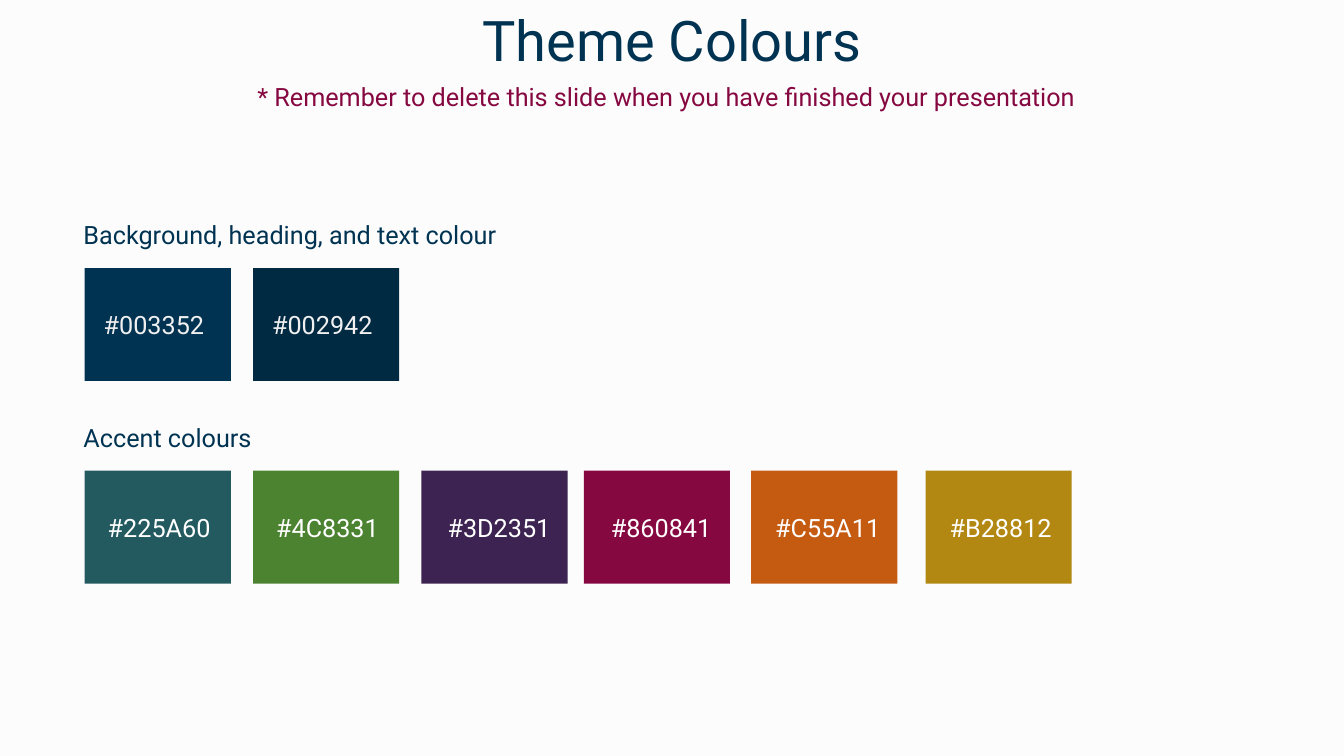
from pptx import Presentation
from pptx.dml.color import RGBColor
from pptx.enum import shapes, text
from pptx.util import Inches, Pt

FONT = "Roboto"
NAVY = "003352"
CLARET = "860841"
WHITE = "FFFFFF"
PALE = "F0F0F0"
SWATCH_WIDTH, SWATCH_HEIGHT = 1.45, 1.12
LABEL_DROP = 0.36

# Swatch left, label offset, colour
BASE_SWATCHES = [(0.84, 0.09, NAVY), (2.51, 0.09, "002942")]
ACCENT_SWATCHES = [
    (0.84, 0.13, "225A60"),
    (2.51, 0.13, "4C8331"),
    (4.18, 0.16, "3D2351"),
    (5.79, 0.17, CLARET),
    (7.45, 0.14, "C55A11"),
    (9.18, 0.14, "B28812"),
]


def colour(hex_string):
    return RGBColor.from_string(hex_string)


def add_run(paragraph, wording, size, hex_string):
    run = paragraph.add_run()
    run.text = wording
    run.font.name = FONT
    run.font.size = Pt(size)
    run.font.color.rgb = colour(hex_string)


def add_text_box(parent, left, top, width, height):
    """Add a wrapping text box to a slide or group and return it."""
    box = parent.shapes.add_textbox(
        Inches(left), Inches(top), Inches(width), Inches(height))
    box.text_frame.word_wrap = True
    return box


def add_title(slide):
    frame = add_text_box(slide, 0, 0, 13.33, 1.45).text_frame
    frame.vertical_anchor = text.MSO_ANCHOR.MIDDLE
    paragraph = frame.paragraphs[0]
    paragraph.alignment = text.PP_ALIGN.CENTER
    paragraph.line_spacing = Pt(30)
    add_run(paragraph, "Theme Colours", 40, NAVY)
    paragraph.add_line_break()
    add_run(paragraph, "* Remember to delete this slide when you have finished "
            "your presentation", 18, CLARET)
    add_run(paragraph, " ", 32, CLARET)


def add_heading(slide, top, wording):
    box = add_text_box(slide, 0.73, top, 4.57, 0.4)
    add_run(box.text_frame.paragraphs[0], wording, 18, NAVY)


def add_swatch(slide, left, top, label_offset, label_width, fill, text_colour):
    """Group a filled rectangle with a label showing its hex code."""
    group = slide.shapes.add_group_shape()
    block = group.shapes.add_shape(
        shapes.MSO_SHAPE.RECTANGLE, Inches(left), Inches(top),
        Inches(SWATCH_WIDTH), Inches(SWATCH_HEIGHT))
    block.shadow.inherit = False
    block.fill.solid()
    block.fill.fore_color.rgb = colour(fill)
    block.line.fill.background()
    label = add_text_box(
        group, left + label_offset, top + LABEL_DROP, label_width, 0.4)
    add_run(label.text_frame.paragraphs[0], f"#{fill}", 18, text_colour)


def add_palette(slide, top, heading, swatches, label_width, text_colour):
    add_heading(slide, top, heading)
    for left, label_offset, fill in swatches:
        add_swatch(slide, left, top + 0.53, label_offset, label_width,
                   fill, text_colour)


def main():
    presentation = Presentation()
    presentation.slide_width = Inches(13.33)
    presentation.slide_height = Inches(7.5)
    slide = presentation.slides.add_slide(presentation.slide_layouts[6])
    slide.background.fill.solid()
    slide.background.fill.fore_color.rgb = colour("FCFCFC")

    add_title(slide)
    add_palette(slide, 2.13, "Background, heading, and text colour",
                BASE_SWATCHES, 1.57, PALE)
    add_palette(slide, 4.14, "Accent colours", ACCENT_SWATCHES, 1.32, WHITE)
    presentation.save("out.pptx")


if __name__ == "__main__":
    main()
